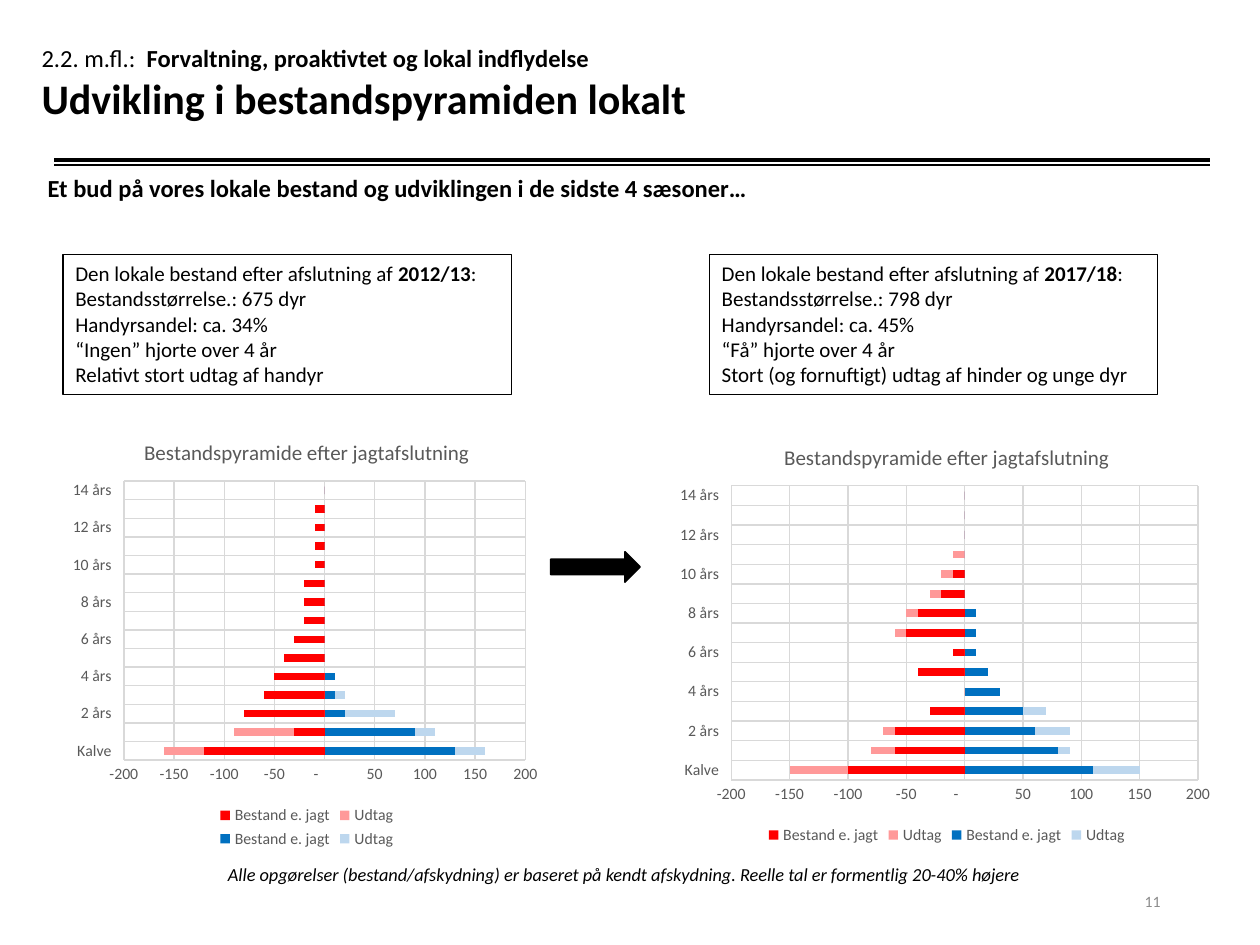
from lxml.etree import SubElement
from pptx import Presentation
from pptx.chart.data import CategoryChartData
from pptx.dml.color import RGBColor
from pptx.enum.chart import XL_CHART_TYPE as ChartType, XL_LEGEND_POSITION as LegendPos
from pptx.enum.chart import XL_TICK_LABEL_POSITION as LabelPos, XL_TICK_MARK as TickMark
from pptx.enum.shapes import MSO_CONNECTOR as Connector, MSO_SHAPE as Shape
from pptx.enum.text import MSO_ANCHOR as Anchor, PP_ALIGN as Align
from pptx.oxml.ns import qn
from pptx.util import Inches, Pt

FONT = "Calibri"
COLORS = {
    "black": "000000", "text": "595959", "grid": "D9D9D9", "number": "8C8C8C",
    "hinds": "FF0000", "hinds_taken": "FF9999", "stags": "0070C0", "stags_taken": "BDD7EE",
}
SERIES = [("Bestand e. jagt", "hinds"), ("Udtag", "hinds_taken"),
          ("Bestand e. jagt", "stags"), ("Udtag", "stags_taken")]
AGES = ["Kalve"] + [f"{year} års" for year in range(1, 15)]
CHART_TITLE = "Bestandspyramide efter jagtafslutning"
NUMBER_FORMAT = '_ * #,##0_ ;_ * \\-#,##0_ ;_ * "-"??_ ;_ '

# One entry per season: text box, chart position and the four value rows
SEASONS = [
    {
        "year": "2012/13",
        "facts": ["Bestandsstørrelse.: 675 dyr", "Handyrsandel: ca. 34%",
                  "“Ingen” hjorte over 4 år", "Relativt stort udtag af handyr"],
        "box_left": 0.5,
        "chart_at": (0.5, 3.33, 3.87, 3.44),
        "values": [
            [-120, -30, -80, -60, -50, -40, -30, -20, -20, -20, -10, -10, -10, -10, 0],
            [-40, -60] + [0] * 13,
            [130, 90, 20, 10, 10] + [0] * 10,
            [30, 20, 50, 10] + [0] * 11,
        ],
    },
    {
        "year": "2017/18",
        "facts": ["Bestandsstørrelse.: 798 dyr", "Handyrsandel: ca. 45%",
                  "“Få” hjorte over 4 år",
                  "Stort (og fornuftigt) udtag af hinder og unge dyr"],
        "box_left": 5.63,
        "chart_at": (5.31, 3.37, 4.41, 3.37),
        "values": [
            [-100, -60, -60, -30, 0, -40, -10, -50, -40, -20, -10, 0, 0, 0, 0],
            [-50, -20, -10, 0, 0, 0, 0, -10, -10, -10, -10, -10, 0, 0, 0],
            [110, 80, 60, 50, 30, 20, 10, 10, 10] + [0] * 6,
            [40, 10, 30, 20] + [0] * 11,
        ],
    },
]


def rgb(name):
    return RGBColor.from_string(COLORS[name])


def style_font(font, size, color="black", bold=False, italic=False):
    font.name, font.size, font.bold, font.italic = FONT, Pt(size), bold, italic
    font.color.rgb = rgb(color)


def style_line(line, color, width):
    line.color.rgb = rgb(color)
    line.width = Pt(width)


def add_span(para, text, size, bold=False):
    span = para.add_run()
    span.text = text
    style_font(span.font, size, bold=bold)


def add_label(slide, at, text, size, color="black", bold=False, italic=False,
              align=Align.LEFT, anchor=Anchor.MIDDLE):
    frame = slide.shapes.add_textbox(*map(Inches, at)).text_frame
    frame.word_wrap = True
    frame.vertical_anchor = anchor
    para = frame.paragraphs[0]
    para.text = text
    para.alignment = align
    style_font(para.runs[0].font, size, color, bold, italic)
    return para


def add_rule(slide, y, width):
    rule = slide.shapes.add_connector(
        Connector.STRAIGHT, Inches(0.43), Inches(y), Inches(9.6), Inches(y))
    style_line(rule.line, "black", width)
    SubElement(rule._element.spPr, qn("a:effectLst"))


def add_season_box(slide, season):
    box = slide.shapes.add_shape(
        Shape.RECTANGLE, Inches(season["box_left"]), Inches(2.02), Inches(3.56), Inches(1.11))
    box.shadow.inherit = False
    box.fill.background()
    style_line(box.line, "black", 0.75)
    frame = box.text_frame
    frame.word_wrap = True
    frame.vertical_anchor = Anchor.TOP
    heading = frame.paragraphs[0]
    add_span(heading, "Den lokale bestand efter afslutning af ", 12)
    add_span(heading, season["year"], 12, bold=True)
    add_span(heading, ":", 12)
    for fact in season["facts"]:
        add_span(frame.add_paragraph(), fact, 12)
    for para in frame.paragraphs:
        para.alignment = Align.LEFT


def add_pyramid(slide, season):
    data = CategoryChartData(number_format=NUMBER_FORMAT)
    data.categories = AGES
    for (name, _), values in zip(SERIES, season["values"]):
        data.add_series(name, values)
    chart = slide.shapes.add_chart(
        ChartType.BAR_STACKED, *map(Inches, season["chart_at"]), data).chart
    style_font(chart.font, 10)

    chart.has_title = True
    title = chart.chart_title.text_frame
    title.text = CHART_TITLE
    style_font(title.paragraphs[0].runs[0].font, 12, "text")
    chart.chart_title.include_in_layout = False

    chart.has_legend = True
    chart.legend.position = LegendPos.BOTTOM
    chart.legend.include_in_layout = False
    style_font(chart.legend.font, 9, "text")

    plot = chart.plots[0]
    plot.gap_width, plot.overlap, plot.vary_by_categories = 150, 100, False
    for series, (_, color) in zip(plot.series, SERIES):
        series.invert_if_negative = False
        series.format.fill.solid()
        series.format.fill.fore_color.rgb = rgb(color)

    ages, animals = chart.category_axis, chart.value_axis
    for axis in (ages, animals):
        axis.major_tick_mark = axis.minor_tick_mark = TickMark.NONE
        axis.has_major_gridlines = True
        style_line(axis.major_gridlines.format.line, "grid", 0.75)
        style_font(axis.tick_labels.font, 9, "text")
    ages.tick_label_position = LabelPos.LOW
    style_line(ages.format.line, "grid", 0.75)
    animals.format.line.fill.background()
    animals.minimum_scale, animals.maximum_scale, animals.major_unit = -200, 200, 50
    animals.tick_labels.number_format = NUMBER_FORMAT
    animals.tick_labels.number_format_is_linked = False


def main():
    deck = Presentation()
    deck.slide_width, deck.slide_height = Inches(10), Inches(7.5)
    page = deck.slides.add_slide(deck.slide_layouts[5])

    # Title and double rule
    title = page.shapes.title
    title.left, title.top, title.width, title.height = map(Inches, (0.23, 0.07, 9, 1.17))
    title.text_frame.vertical_anchor = Anchor.MIDDLE
    para = title.text_frame.paragraphs[0]
    para.alignment = Align.LEFT
    add_span(para, "2.2. m.fl.:  ", 14)
    add_span(para, "Forvaltning, proaktivtet og lokal indflydelse", 14, bold=True)
    para.add_line_break()
    add_span(para, "Udvikling i bestandspyramiden lokalt", 24, bold=True)
    add_rule(page, 1.31, 1)
    add_rule(page, 1.27, 2)

    # Subtitle, footnote and page number
    subtitle = add_label(
        page, (0.28, 1.35, 9, 0.35),
        "Et bud på vores lokale bestand og udviklingen i de sidste 4 sæsoner…",
        14, bold=True, anchor=Anchor.TOP)
    subtitle.line_spacing = 0.9
    add_label(page, (1.71, 6.74, 6.65, 0.4),
              "Alle opgørelser (bestand/afskydning) er baseret på kendt afskydning. "
              "Reelle tal er formentlig 20-40% højere", 10.5, italic=True)
    add_label(page, (7.06, 6.95, 2.25, 0.4), "11", 9, "number", align=Align.RIGHT)

    # The two seasons, with an arrow from the first to the second
    for season in SEASONS:
        add_pyramid(page, season)
        add_season_box(page, season)
    arrow = page.shapes.add_shape(
        Shape.RIGHT_ARROW, Inches(4.37), Inches(4.38), Inches(0.71), Inches(0.24))
    arrow.shadow.inherit = False
    arrow.fill.solid()
    arrow.fill.fore_color.rgb = rgb("black")
    style_line(arrow.line, "black", 1)

    deck.save("out.pptx")


if __name__ == "__main__":
    main()
